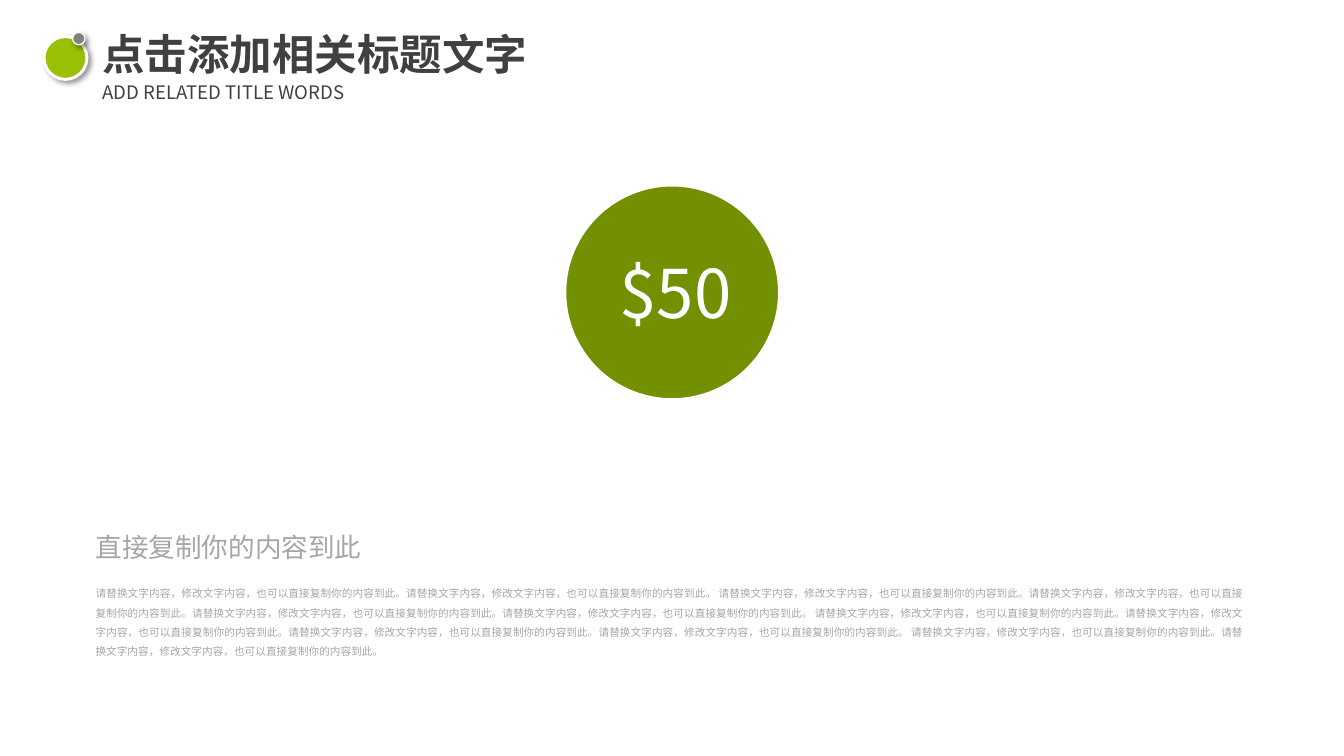
from dataclasses import dataclass

from lxml import etree
from pptx import Presentation
from pptx.dml.color import RGBColor
from pptx.enum.shapes import MSO_SHAPE
from pptx.enum.text import MSO_AUTO_SIZE, PP_ALIGN
from pptx.oxml.ns import qn
from pptx.shapes.autoshape import Shape
from pptx.shapes.shapetree import GroupShapes, SlideShapes
from pptx.util import Cm, Pt

OVAL = MSO_SHAPE.OVAL
GROW = MSO_AUTO_SIZE.SHAPE_TO_FIT_TEXT
LEFT = PP_ALIGN.LEFT
JUSTIFY = PP_ALIGN.JUSTIFY

WHITE = RGBColor(0xFF, 0xFF, 0xFF)
BLACK = RGBColor(0x00, 0x00, 0x00)
OLIVE = RGBColor(0x73, 0x90, 0x03)
LIME = RGBColor(0x99, 0xC0, 0x04)
GREY = RGBColor(0x80, 0x80, 0x80)
PALE_GREY = RGBColor(0xA6, 0xA6, 0xA6)
CHARCOAL = RGBColor(0x40, 0x40, 0x40)

FONT = "Noto Sans CJK SC"
SENTENCE = "请替换文字内容，修改文字内容，也可以直接复制你的内容到此。"
BODY = " ".join(SENTENCE * count for count in (2, 4, 4, 2))


@dataclass(frozen=True)
class Label:
    text: str
    left: float
    top: float
    width: float
    height: float
    size: float
    color: RGBColor
    bold: bool = False
    align: PP_ALIGN = LEFT
    spacing: float = 1.0
    side_inset: float = 0
    end_inset: float = 0
    wrap: bool = True


@dataclass(frozen=True)
class Disc:
    left: float
    top: float
    diameter: float
    fill: RGBColor
    line_width: float


PRICE_DISC = Disc(14.99, 4.9, 5.74, OLIVE, 3.25)
PRICE = Label("$50", 16.21, 6.55, 3.76, 2.41, 50.6, WHITE,
              side_inset=0.25, end_inset=0.13, wrap=False)
LABELS = (
    Label(BODY, 2.54, 15.44, 30.53, 2.06, 8, PALE_GREY, align=JUSTIFY, spacing=1.5),
    Label("直接复制你的内容到此", 2.54, 14.1, 7.92, 0.86, 20, PALE_GREY, align=JUSTIFY),
    Label("点击添加相关标题文字", 2.72, 0.74, 15.27, 1.37, 32, CHARCOAL, bold=True),
    Label("ADD RELATED TITLE WORDS", 2.72, 2.16, 9.22, 0.61, 14, CHARCOAL),
)
BADGE = (
    Disc(1.17, 0.97, 1.14, LIME, 2.25),
    Disc(1.93, 0.86, 0.33, GREY, 1),
)


def add_label(shapes: SlideShapes | GroupShapes, label: Label) -> Shape:
    box = shapes.add_textbox(
        Cm(label.left), Cm(label.top), Cm(label.width), Cm(label.height)
    )
    frame = box.text_frame
    frame_format = {
        "word_wrap": label.wrap,
        "auto_size": GROW,
        "margin_left": Cm(label.side_inset),
        "margin_right": Cm(label.side_inset),
        "margin_top": Cm(label.end_inset),
        "margin_bottom": Cm(label.end_inset),
    }
    for name, value in frame_format.items():
        setattr(frame, name, value)
    paragraph = frame.paragraphs[0]
    paragraph.alignment = label.align
    paragraph.line_spacing = label.spacing
    run = paragraph.add_run()
    run.text = label.text
    run.font.color.rgb = label.color
    font_format = {"name": FONT, "size": Pt(label.size), "bold": label.bold}
    for name, value in font_format.items():
        setattr(run.font, name, value)
    etree.SubElement(run._r.get_or_add_rPr(), qn("a:ea"), typeface=FONT)
    return box


def add_disc(shapes: SlideShapes | GroupShapes, disc: Disc) -> Shape:
    oval = shapes.add_shape(
        OVAL, Cm(disc.left), Cm(disc.top), Cm(disc.diameter), Cm(disc.diameter)
    )
    oval.shadow.inherit = False
    oval.fill.solid()
    oval.fill.fore_color.rgb = disc.fill
    oval.line.color.rgb = WHITE
    oval.line.width = Pt(disc.line_width)
    return oval


def cast_shadow(shape: Shape) -> None:
    effects = shape._element.spPr.find(qn("a:effectLst"))
    shadow = etree.SubElement(
        effects, qn("a:outerShdw"), blurRad=str(Pt(4)), dist=str(Pt(3)),
        dir=str(45 * 60000), algn="tl", rotWithShape="0",
    )
    color = etree.SubElement(shadow, qn("a:srgbClr"), val=str(BLACK))
    etree.SubElement(color, qn("a:alpha"), val="40000")


def main() -> None:
    deck = Presentation()
    deck.slide_width = Cm(35.71)
    deck.slide_height = Cm(20.09)
    slide = deck.slides.add_slide(deck.slide_layouts[6])

    price_group = slide.shapes.add_group_shape()
    add_disc(price_group.shapes, PRICE_DISC)
    price = add_label(price_group.shapes, PRICE)
    price.fill.solid()
    price.fill.fore_color.rgb = OLIVE

    for label in LABELS:
        add_label(slide.shapes, label)
    for disc in BADGE:
        cast_shadow(add_disc(slide.shapes, disc))

    deck.save("out.pptx")


if __name__ == "__main__":
    main()
